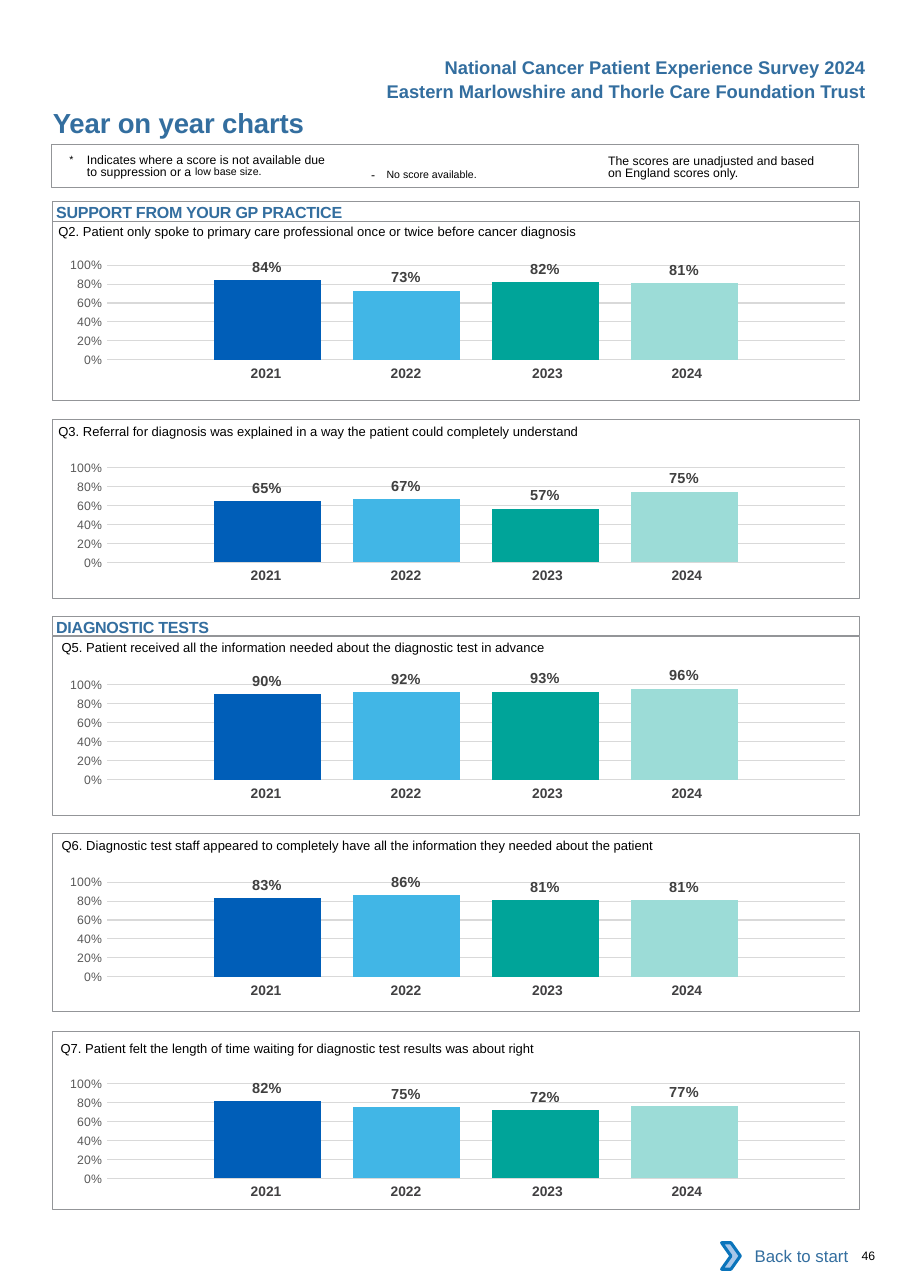
"""Build the year on year charts page of the patient experience survey."""
from lxml.etree import SubElement
from pptx import Presentation
from pptx.chart.data import CategoryChartData
from pptx.dml.color import RGBColor
from pptx.enum.chart import XL_CHART_TYPE, XL_LABEL_POSITION, XL_TICK_MARK
from pptx.enum.shapes import MSO_SHAPE
from pptx.enum.text import MSO_ANCHOR, PP_ALIGN
from pptx.oxml.ns import qn
from pptx.util import Inches, Pt

BLUE = "336E9F"
BLACK = "000000"
GREY = "939598"
NO_STYLE = "{2D5ABB26-0587-4C30-8999-92F81FD0307C}"
YEARS = {"2021": "005EB8", "2022": "41B6E6", "2023": "00A499", "2024": "9CDCD7"}
COLUMN_WIDTHS = [1.27, 1.27, 1.34, 1.27]
RIGHT_MARGINS = [0, 0, 0.04, 0.12]
PLOT_LAYOUT = {"layoutTarget": "inner", "xMode": "edge", "yMode": "edge",
               "x": 0.079, "y": 0.145, "w": 0.915, "h": 0.666}


def color(hex_string):
    return RGBColor.from_string(hex_string)


def write(shape, runs, hex_string=BLACK, bold=False, align=PP_ALIGN.LEFT,
          margins=(0, 0, 0, 0), wrap=True, spacing=0):
    frame = shape.text_frame
    frame.word_wrap = wrap
    frame.margin_left, frame.margin_top, frame.margin_right, frame.margin_bottom = map(Inches, margins)
    paragraph = frame.paragraphs[0]
    paragraph.alignment = align
    for text, size, baseline in runs:
        run = paragraph.add_run()
        run.text = text
        run.font.name = "Arial"
        run.font.size = Pt(size)
        run.font.bold = bold
        run.font.color.rgb = color(hex_string)
        properties = run.font._element
        if baseline:
            properties.set("baseline", str(baseline * 1000))
        if spacing:
            properties.set("spc", str(int(spacing * 100)))
    return paragraph


presentation = Presentation()
presentation.slide_width = Inches(8.26)
presentation.slide_height = Inches(11.69)
slide = presentation.slides.add_slide(presentation.slide_layouts[6])
shapes = slide.shapes

for top, left, width, heading in [
    (0.46, 3.92, 4.04, "National Cancer Patient Experience Survey 2024"),
    (0.68, 3.29, 4.67, "Eastern Marlowshire and Thorle Care Foundation Trust"),
]:
    box = shapes.add_textbox(Inches(left), Inches(top), Inches(width), Inches(0.3))
    write(box, [(heading, 12, 0)], BLUE, True, PP_ALIGN.RIGHT, (0.1, 0.05, 0.1, 0.05), False)

title = shapes.add_textbox(Inches(0.48), Inches(0.96), Inches(4.5), Inches(0.3))
write(title, [("Year on year charts", 18, 0)], BLUE, True, spacing=-0.1)

suppression = shapes.add_textbox(Inches(0.63), Inches(1.38), Inches(2.4), Inches(0.27))
paragraph = write(suppression, [
    ("*\t", 12, 3),
    ("Indicates where a score is not available due to suppression or a ", 8, 0),
    ("low base size.", 12, 7),
], margins=(0, 0.03, 0, 0))
paragraph.line_spacing = Pt(8.1)
paragraph._p.get_or_add_pPr().set("marL", str(Inches(0.16)))
paragraph._p.get_or_add_pPr().set("indent", str(-Inches(0.16)))

no_score = shapes.add_textbox(Inches(3.27), Inches(1.41), Inches(1.83), Inches(0.24))
paragraph = write(no_score, [("-\t", 8, 0), ("No score available.", 12, 3)],
                  margins=(0.1, 0.05, 0.1, 0.05))
paragraph._p.get_or_add_pPr().set("marL", str(Inches(0.14)))
paragraph._p.get_or_add_pPr().set("indent", str(-Inches(0.14)))

unadjusted = shapes.add_textbox(Inches(5.52), Inches(1.38), Inches(1.95), Inches(0.27))
paragraph = write(unadjusted, [
    ("The scores are unadjusted and based on England scores only.", 8, 0),
], margins=(0, 0.03, 0, 0))
paragraph.line_spacing = Pt(8.1)

panels = [
    (2.01, 2.22, 0.53, 1.94, [0.84, 0.73, 0.82, 0.81],
     "Q2. Patient only spoke to primary care professional once or twice before cancer diagnosis"),
    (3.81, 4.06, 0.53, 3.75, [0.65, 0.67, 0.57, 0.75],
     "Q3. Referral for diagnosis was explained in a way the patient could completely understand"),
    (5.78, 6.03, 0.56, 5.71, [0.90, 0.92, 0.93, 0.96],
     "Q5. Patient received all the information needed about the diagnostic test in advance"),
    (7.56, 7.82, 0.56, 7.51, [0.83, 0.86, 0.81, 0.81],
     "Q6. Diagnostic test staff appeared to completely have all the information they needed about the patient"),
    (9.36, 9.65, 0.55, 9.35, [0.82, 0.75, 0.72, 0.77],
     "Q7. Patient felt the length of time waiting for diagnostic test results was about right"),
]
for panel_top, chart_top, question_left, question_top, scores, question in panels:
    chart_data = CategoryChartData(number_format="0%")
    chart_data.categories = ["1"]
    for year, score in zip(YEARS, scores):
        chart_data.add_series(year, [score])
    chart = shapes.add_chart(XL_CHART_TYPE.COLUMN_CLUSTERED, Inches(0.39), Inches(chart_top),
                             Inches(7.32), Inches(1.29), chart_data).chart
    chart.has_legend = False
    chart.has_title = False
    chart.font.name = "Calibri"
    chart.font.size = Pt(10)
    chart.font.color.rgb = color(BLACK)
    chart.category_axis.visible = False
    axis = chart.value_axis
    axis.minimum_scale, axis.maximum_scale, axis.major_unit = 0, 1, 0.2
    axis.major_tick_mark = XL_TICK_MARK.NONE
    axis.format.line.fill.background()
    axis.major_gridlines.format.line.color.rgb = color("D9D9D9")
    axis.major_gridlines.format.line.width = Pt(0.75)
    axis.tick_labels.number_format = "0%"
    axis.tick_labels.number_format_is_linked = False
    axis.tick_labels.font.name = "Arial"
    axis.tick_labels.font.size = Pt(8)
    axis.tick_labels.font.color.rgb = color("595959")
    plot = chart.plots[0]
    plot.vary_by_categories = False
    plot.gap_width = 200
    plot.overlap = -30
    for series, fill in zip(plot.series, YEARS.values()):
        series.format.fill.solid()
        series.format.fill.fore_color.rgb = color(fill)
        labels = series.data_labels
        labels.show_value = True
        labels.position = XL_LABEL_POSITION.OUTSIDE_END
        labels.number_format = "0%"
        labels.number_format_is_linked = False
        labels.font.name = "Arial"
        labels.font.size = Pt(9.5)
        labels.font.bold = True
        labels.font.color.rgb = color("404040")
    plot_area = chart._chartSpace.chart.plotArea
    for layout in plot_area.findall(qn("c:layout")):
        plot_area.remove(layout)
    layout = SubElement(plot_area, qn("c:layout"))
    plot_area.insert(0, layout)
    manual = SubElement(layout, qn("c:manualLayout"))
    for tag, value in PLOT_LAYOUT.items():
        SubElement(manual, qn(f"c:{tag}")).set("val", str(value))

    table = shapes.add_table(1, len(YEARS), Inches(1.73), Inches(chart_top + 1.05),
                             Inches(sum(COLUMN_WIDTHS)), Inches(0.27)).table
    table.first_row = False
    table.horz_banding = False
    table._tbl.tblPr.find(qn("a:tableStyleId")).text = NO_STYLE
    for index, year in enumerate(YEARS):
        table.columns[index].width = Inches(COLUMN_WIDTHS[index])
        cell = table.cell(0, index)
        cell.fill.background()
        cell.margin_left = Inches(0.1)
        cell.margin_right = Inches(RIGHT_MARGINS[index])
        cell.text_frame.text = year
        paragraph = cell.text_frame.paragraphs[0]
        paragraph.alignment = PP_ALIGN.CENTER
        font = paragraph.runs[0].font
        font.name, font.size, font.bold = "Arial", Pt(9), True
        font.color.rgb = color("414042")

    box = shapes.add_textbox(Inches(question_left), Inches(question_top), Inches(7.2), Inches(0.24))
    write(box, [(question, 8.5, 0)], margins=(0, 0.09, 0, 0))

for left, top, height, line_width, section in [
    (0.47, 1.31, 0.39, 0.75, ""),
    (0.48, 1.83, 0.18, 0.5, "SUPPORT FROM YOUR GP PRACTICE"),
    (0.48, 5.59, 0.18, 0.5, "DIAGNOSTIC TESTS"),
] + [(0.48, panel[0], 1.62, 0.5, "") for panel in panels]:
    frame = shapes.add_shape(MSO_SHAPE.RECTANGLE, Inches(left), Inches(top), Inches(7.32), Inches(height))
    frame.shadow.inherit = False
    frame.fill.background()
    frame.line.color.rgb = color(GREY)
    frame.line.width = Pt(line_width)
    if section:
        write(frame, [(section, 10.5, 0)], BLUE, True, margins=(0.03, 0.01, 0, 0), spacing=-0.15)
        frame.text_frame.vertical_anchor = MSO_ANCHOR.TOP

back_button = shapes.add_shape(MSO_SHAPE.RECTANGLE, Inches(6.62), Inches(11.19), Inches(1.18), Inches(0.42))
back_button.shadow.inherit = False
back_button.fill.solid()
back_button.fill.fore_color.rgb = color("FFFFFF")
back_button.line.fill.background()
write(back_button, [("Back to start", 11, 0)], BLUE, align=PP_ALIGN.RIGHT, margins=(0.1, 0.05, 0.1, 0.05))

chevron = shapes.add_shape(MSO_SHAPE.CHEVRON, Inches(6.55), Inches(11.28), Inches(0.17), Inches(0.24))
chevron.shadow.inherit = False
chevron.fill.solid()
chevron.fill.fore_color.rgb = color("A8C7E9")
chevron.line.color.rgb = color("0A74BB")
chevron.line.width = Pt(2)

page_number = shapes.add_textbox(Inches(7.82), Inches(11.33), Inches(0.41), Inches(0.13))
write(page_number, [("46", 8, 0)])

presentation.save("out.pptx")
